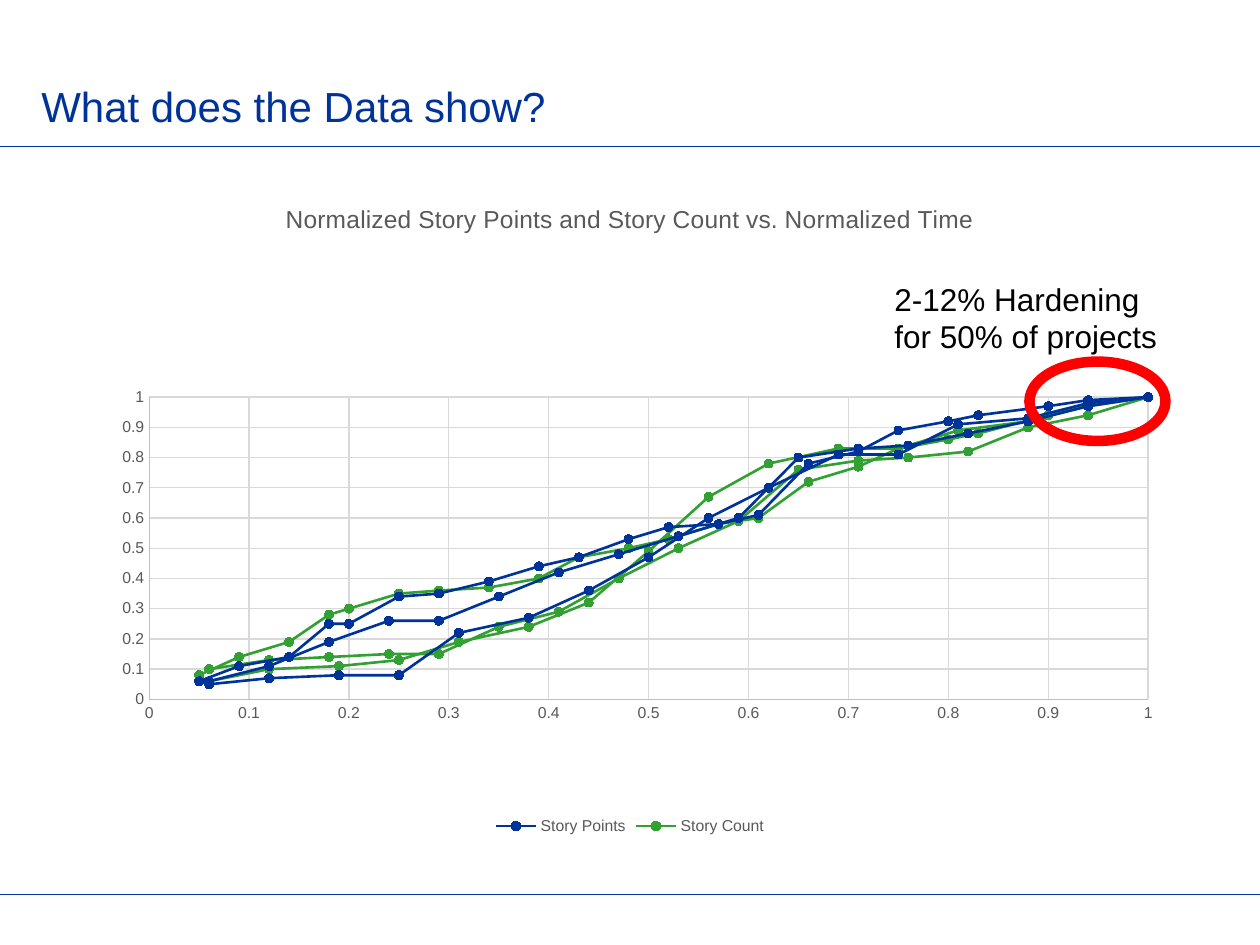
from lxml import etree
from pptx import Presentation
from pptx.chart.data import XyChartData
from pptx.dml.color import RGBColor
from pptx.enum.chart import XL_CHART_TYPE as ChartType, XL_LEGEND_POSITION as LegendPosition
from pptx.enum.chart import XL_MARKER_STYLE as MarkerStyle, XL_TICK_MARK as TickMark
from pptx.enum.shapes import MSO_CONNECTOR as Connector, MSO_SHAPE as Shape
from pptx.enum.text import MSO_ANCHOR as Anchor
from pptx.oxml import parse_xml
from pptx.oxml.ns import nsdecls, qn
from pptx.util import Inches, Pt

THEME = {
    "font": "Arial",
    "blue": "003399", "green": "32A032", "red": "FF0000",
    "black": "000000", "gray": "595959", "axis": "BFBFBF", "grid": "D9D9D9",
    "title": 24, "note": 18, "chart_title": 14, "chart_label": 9,
}

TITLE = "What does the Data show?"
NOTE = "2-12% Hardening for 50% of projects"
CHART_TITLE = "Normalized Story Points and Story Count vs. Normalized Time"
RULE_TOPS = (1.16, 7.1)
PLOT_AREA = {"x": 0.076, "y": 0.33, "w": 0.881, "h": 0.457}


def even_times(sprints):
    return [round(sprint / sprints, 2) for sprint in range(1, sprints + 1)]


PROJECT_TIMES = [
    [0.05, 0.09, 0.14, 0.18, 0.2, 0.25, 0.29, 0.34, 0.39, 0.43, 0.48,
     0.52, 0.57, 0.61, 0.66, 0.71, 0.75, 0.8, 0.83, 0.9, 0.94, 1],
    even_times(16),
    even_times(17),
]
SERIES = [
    ("Story Points", "blue", [
        [0.06, 0.11, 0.14, 0.25, 0.25, 0.34, 0.35, 0.39, 0.44, 0.47, 0.53,
         0.57, 0.58, 0.61, 0.78, 0.82, 0.89, 0.92, 0.94, 0.97, 0.99, 1],
        [0.05, 0.07, 0.08, 0.08, 0.22, 0.27, 0.36, 0.47,
         0.6, 0.7, 0.81, 0.81, 0.91, 0.93, 0.98, 1],
        [0.06, 0.11, 0.19, 0.26, 0.26, 0.34, 0.42, 0.48, 0.54,
         0.6, 0.8, 0.83, 0.84, 0.88, 0.92, 0.97, 1],
    ]),
    ("Story Count", "green", [
        [0.08, 0.14, 0.19, 0.28, 0.3, 0.35, 0.36, 0.37, 0.4, 0.47, 0.5,
         0.53, 0.58, 0.6, 0.72, 0.77, 0.83, 0.86, 0.88, 0.94, 0.97, 1],
        [0.06, 0.1, 0.11, 0.13, 0.19, 0.24, 0.32, 0.49,
         0.67, 0.78, 0.83, 0.83, 0.89, 0.92, 0.98, 1],
        [0.1, 0.13, 0.14, 0.15, 0.15, 0.24, 0.29, 0.4, 0.5,
         0.59, 0.76, 0.79, 0.8, 0.82, 0.9, 0.94, 1],
    ]),
]


def color(name):
    return RGBColor.from_string(THEME[name])


def style_font(font, size, color_name):
    values = {"name": THEME["font"], "size": Pt(THEME[size]), "bold": False}
    for attribute, value in values.items():
        setattr(font, attribute, value)
    font.color.rgb = color(color_name)


def style_line(line, color_name, width):
    line.color.rgb = color(color_name)
    line.width = Pt(width)


def add_text(slide, box, text, size, color_name, anchor):
    frame = slide.shapes.add_textbox(*map(Inches, box)).text_frame
    frame.word_wrap = True
    frame.vertical_anchor = anchor
    paragraph = frame.paragraphs[0]
    paragraph.text = text
    style_font(paragraph.runs[0].font, size, color_name)


def add_rule(slide, top):
    rule = slide.shapes.add_connector(
        Connector.STRAIGHT, 0, Inches(top), Inches(10), Inches(top))
    style_line(rule.line, "blue", 0.5)
    etree.SubElement(rule.line._get_or_add_ln().getparent(), qn("a:effectLst"))


def build_chart_data():
    """Join the projects of each series, with an empty point as the gap between them."""
    data = XyChartData()
    for name, _, project_values in SERIES:
        series = data.add_series(name)
        for index, (times, values) in enumerate(zip(PROJECT_TIMES, project_values)):
            if index:
                series.add_data_point(0, None)
            for time, value in zip(times, values):
                series.add_data_point(time, value)
    return data


def style_axis(axis):
    values = {
        "minimum_scale": 0, "maximum_scale": 1, "major_unit": 0.1,
        "has_major_gridlines": True, "has_title": False,
        "major_tick_mark": TickMark.NONE, "minor_tick_mark": TickMark.NONE,
    }
    for attribute, value in values.items():
        setattr(axis, attribute, value)
    style_line(axis.format.line, "axis", 0.75)
    style_line(axis.major_gridlines.format.line, "grid", 0.75)
    style_font(axis.tick_labels.font, "chart_label", "gray")


def place_plot_area(chart):
    plot_area = chart._chartSpace.chart.plotArea
    for layout in plot_area.findall(qn("c:layout")):
        plot_area.remove(layout)
    modes = '<c:layoutTarget val="inner"/><c:xMode val="edge"/><c:yMode val="edge"/>'
    sizes = "".join(f'<c:{key} val="{value}"/>' for key, value in PLOT_AREA.items())
    plot_area.insert(0, parse_xml(
        f'<c:layout {nsdecls("c")}><c:manualLayout>{modes}{sizes}'
        "</c:manualLayout></c:layout>"))


def add_story_chart(slide):
    box = map(Inches, (0.5, 1.42, 9, 5.25))
    chart = slide.shapes.add_chart(ChartType.XY_SCATTER_LINES, *box, build_chart_data()).chart
    style_font(chart.font, "chart_label", "gray")

    chart.has_title = True
    title = chart.chart_title.text_frame.paragraphs[0]
    title.text = CHART_TITLE
    style_font(title.runs[0].font, "chart_title", "gray")

    chart.has_legend = True
    chart.legend.position = LegendPosition.BOTTOM
    chart.legend.include_in_layout = False
    style_font(chart.legend.font, "chart_label", "gray")

    for axis in (chart.category_axis, chart.value_axis):
        style_axis(axis)
    plot = chart.plots[0]
    plot.vary_by_categories = False
    for series, (_, color_name, _) in zip(plot.series, SERIES):
        series.smooth = False
        style_line(series.format.line, color_name, 1.5)
        marker = series.marker
        marker.style = MarkerStyle.CIRCLE
        marker.size = 5
        marker.format.fill.solid()
        marker.format.fill.fore_color.rgb = color(color_name)
        style_line(marker.format.line, color_name, 0.75)
    place_plot_area(chart)


def add_highlight(slide):
    ellipse = slide.shapes.add_shape(Shape.OVAL, *map(Inches, (8.17, 2.87, 1.08, 0.63)))
    ellipse.shadow.inherit = False
    ellipse.fill.background()
    style_line(ellipse.line, "red", 6)


def main():
    presentation = Presentation()
    presentation.slide_width, presentation.slide_height = Inches(10), Inches(7.5)
    slide = presentation.slides.add_slide(presentation.slide_layouts[6])
    for top in RULE_TOPS:
        add_rule(slide, top)
    add_text(slide, (0.23, 0.15, 8.28, 0.94), TITLE, "title", "blue", Anchor.BOTTOM)
    add_story_chart(slide)
    add_text(slide, (7, 2.17, 2.33, 0.71), NOTE, "note", "black", Anchor.TOP)
    add_highlight(slide)
    presentation.save("out.pptx")


if __name__ == "__main__":
    main()
